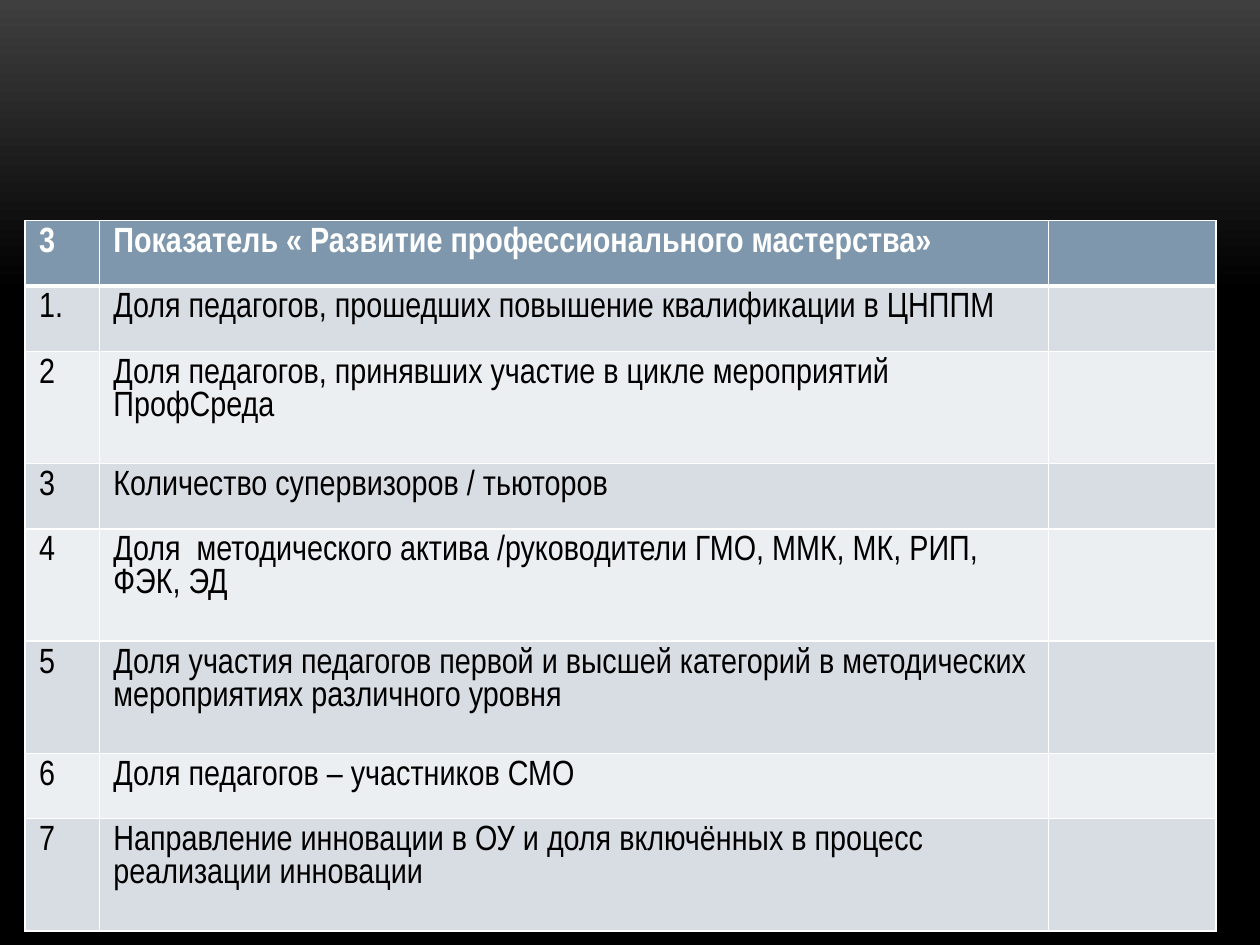
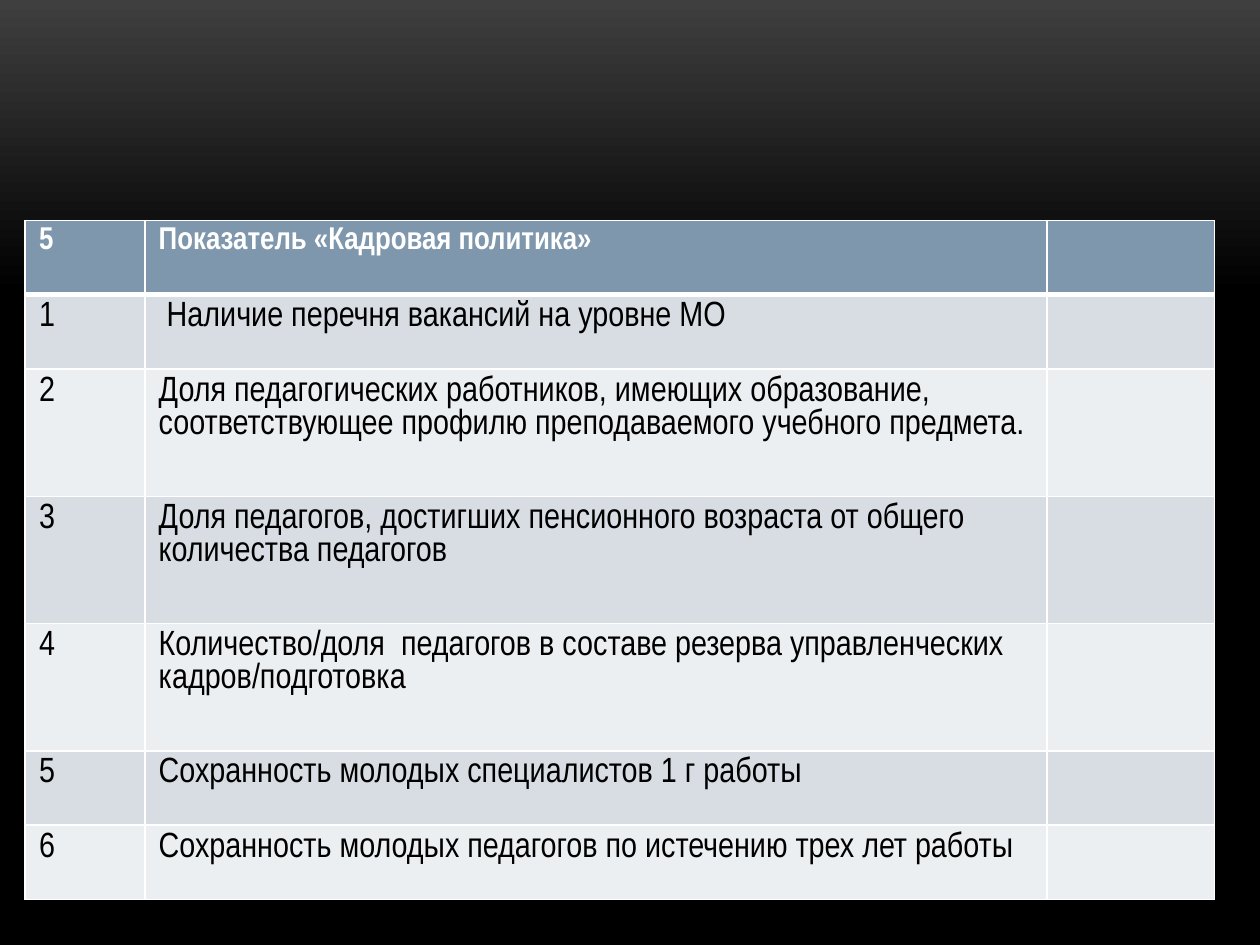
from copy import deepcopy

from lxml import etree
from pptx import Presentation
from pptx.dml.color import RGBColor
from pptx.enum.text import MSO_ANCHOR
from pptx.oxml.ns import qn
from pptx.util import Inches, Pt

TOP = MSO_ANCHOR.TOP
WHITE = RGBColor(0xFF, 0xFF, 0xFF)
BLACK = RGBColor(0x00, 0x00, 0x00)
CHARCOAL = RGBColor(0x3F, 0x3F, 0x3F)
HEADER = RGBColor(0x7E, 0x97, 0xAD)
BANDS = (RGBColor(0xD8, 0xDD, 0xE3), RGBColor(0xEC, 0xEF, 0xF1))
FONT = "Arial Narrow"
CELL = {
    "margin_left": Inches(0.11),
    "margin_right": Inches(0.11),
    "margin_top": Inches(0.05),
    "margin_bottom": Inches(0.05),
    "vertical_anchor": TOP,
}
THIN, THICK = Pt(1), Pt(3)
LEFT, TABLE_TOP = 0.2, 1.75

MASTERY = [
    ("3", "Показатель « Развитие профессионального мастерства»"),
    ("1.", "Доля педагогов, прошедших повышение квалификации в ЦНППМ"),
    ("2", "Доля педагогов, принявших участие в цикле мероприятий ПрофСреда"),
    ("3", "Количество супервизоров / тьюторов"),
    ("4", "Доля  методического актива /руководители ГМО, ММК, МК, РИП, ФЭК, ЭД"),
    ("5", "Доля участия педагогов первой и высшей категорий в методических "
          "мероприятиях различного уровня"),
    ("6", "Доля педагогов – участников СМО"),
    ("7", "Направление инновации в ОУ и доля включённых в процесс  реализации инновации"),
]
STAFFING = [
    ("5", "Показатель «Кадровая политика»"),
    ("1", " Наличие перечня вакансий на уровне МО"),
    ("2", "Доля педагогических работников, имеющих образование, "
          "соответствующее профилю преподаваемого учебного предмета."),
    ("3", "Доля педагогов, достигших пенсионного возраста от общего количества педагогов"),
    ("4", "Количество/доля  педагогов в составе резерва управленческих кадров/подготовка"),
    ("5", "Сохранность молодых специалистов 1 г работы"),
    ("6", "Сохранность молодых педагогов по истечению трех лет работы"),
]


class Deck:
    def __init__(self):
        self.prs = Presentation()
        self.prs.slide_width = Inches(10)
        self.prs.slide_height = Inches(7.5)
        self.s = None
        self.background()

    def background(self):
        master = self.prs.slide_master
        fill = master.background.fill
        fill.gradient()
        fill.gradient_angle = 270
        for stop, color, position in zip(fill.gradient_stops, (CHARCOAL, BLACK), (0, 0.31)):
            stop.color.rgb = color
            stop.position = position
        stops = master.element.find(".//" + qn("a:gsLst"))
        last = deepcopy(stops[-1])
        last.set("pos", "100000")
        stops.append(last)

    def slide(self):
        self.s = self.prs.slides.add_slide(self.prs.slide_layouts[6])

    def borders(self, cell, top, bottom):
        tc_pr = cell._tc.get_or_add_tcPr()
        for side, width in (("L", THIN), ("R", THIN), ("T", top), ("B", bottom)):
            line = etree.SubElement(tc_pr, qn(f"a:ln{side}"), w=str(width))
            solid = etree.SubElement(line, qn("a:solidFill"))
            etree.SubElement(solid, qn("a:srgbClr"), val=str(WHITE))

    def cell_text(self, cell, text, style):
        r = cell.text_frame.paragraphs[0].add_run()
        r.text = text
        r.font.color.rgb = style["color"]
        for name in ("name", "size", "bold"):
            setattr(r.font, name, style[name])

    def table(self, rows, widths, heights, header_size):
        tbl = self.s.shapes.add_table(
            len(rows), len(widths), Inches(LEFT), Inches(TABLE_TOP),
            Inches(sum(widths)), Inches(sum(heights))).table
        for column, width in zip(tbl.columns, widths):
            column.width = Inches(width)
        for row, height in zip(tbl.rows, heights):
            row.height = Inches(height)
        header = {"name": FONT, "size": Pt(header_size), "bold": True, "color": WHITE}
        body = {"name": FONT, "size": Pt(20), "bold": False, "color": BLACK}
        for i, texts in enumerate(rows):
            for j in range(len(widths)):
                cell = tbl.cell(i, j)
                for name, value in CELL.items():
                    setattr(cell, name, value)
                self.borders(cell, THICK if i == 1 else THIN, THICK if i == 0 else THIN)
                cell.fill.solid()
                cell.fill.fore_color.rgb = BANDS[(i - 1) % 2] if i else HEADER
                if j < len(texts):
                    self.cell_text(cell, texts[j], body if i else header)


def main():
    deck = Deck()
    deck.slide()
    low, high = 0.52, 0.89
    deck.table(MASTERY, (0.59, 7.53, 1.33),
               (low, low, high, low, high, high, low, high), 20)
    deck.slide()
    low, high = 0.59, 1.01
    deck.table(STAFFING, (0.95, 7.16, 1.33),
               (low, low, high, high, high, low, low), 18)
    deck.prs.save("out.pptx")


if __name__ == "__main__":
    main()
